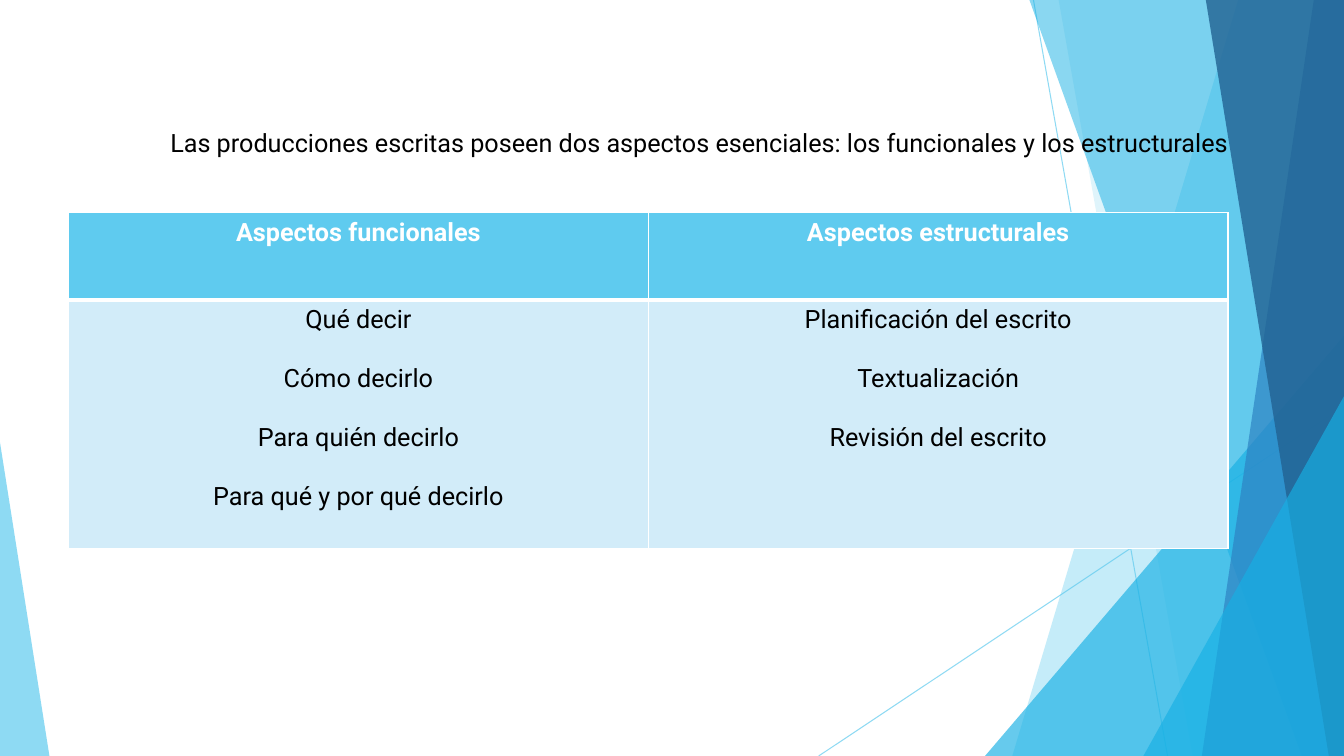
from dataclasses import dataclass

from lxml.etree import SubElement
from pptx import Presentation
from pptx.dml.color import RGBColor
from pptx.enum.shapes import MSO_CONNECTOR as Link, MSO_SHAPE as Kind
from pptx.enum.text import PP_ALIGN as Align
from pptx.oxml import parse_xml
from pptx.oxml.ns import nsdecls, qn
from pptx.util import Inches, Pt

WIDE, HIGH = 13.33, 7.5
FONT, SIZE = "Roboto", Pt(18)
SKY = RGBColor(0x5F, 0xCB, 0xEF)
CYAN = RGBColor(0x17, 0xB0, 0xE4)
BLUE = RGBColor(0x2E, 0x83, 0xC3)
NAVY = RGBColor(0x22, 0x62, 0x92)
PALE = RGBColor(0xD2, 0xEC, 0xF9)
WHITE = RGBColor(0xFF, 0xFF, 0xFF)
BLACK = RGBColor(0, 0, 0)


@dataclass
class Ray:
    start: tuple[float, float]
    end: tuple[float, float]


@dataclass
class Band:
    """Full-height facet that reaches the right edge."""
    top: float
    foot: float
    color: RGBColor
    alpha: int


@dataclass
class Peak:
    """Right triangle standing on the bottom edge."""
    left: float
    top: float
    width: float
    tip: float
    color: RGBColor
    alpha: int


RAYS = [Ray((10.25, 0), (11.58, HIGH)), Ray((WIDE, 4.03), (8.12, HIGH))]
FACETS = [
    Band(12.28, 10.04, SKY, 36),
    Band(10.5, 11.83, SKY, 20),
    Peak(9.77, 3.33, 3.56, 1, CYAN, 66),
    Band(10.21, 12.91, CYAN, 50),
    Band(13.03, 11.92, BLUE, 70),
    Band(11.96, 13.18, NAVY, 80),
    Peak(11.34, 3.93, 1.99, 1, CYAN, 66),
    Peak(0, 4.39, 0.49, 0, SKY, 70),
]
INTRO = ("Las producciones escritas poseen dos aspectos esenciales: "
         "los funcionales y los estructurales")
ASPECTS = {
    "Aspectos funcionales": [
        "Qué decir", "Cómo decirlo", "Para quién decirlo",
        "Para qué y por qué decirlo"],
    "Aspectos estructurales": [
        "Planificación del escrito", "Textualización",
        "Revisión del escrito"],
}


def fade(node, alpha: int) -> None:
    for color in node.iter(qn("a:srgbClr")):
        SubElement(color, qn("a:alpha"), val=str(alpha * 1000))


def style(par, color: RGBColor, bold: bool = False) -> None:
    font = par.font
    font.name, font.size, font.bold = FONT, SIZE, bold
    font.color.rgb = color


def draw_ray(shapes, ray: Ray) -> None:
    line = shapes.add_connector(
        Link.STRAIGHT, *map(Inches, ray.start + ray.end))
    line.line.color.rgb = SKY
    line.line.width = Pt(0.75)
    props = line._element.spPr
    fade(props, 70)
    SubElement(props, qn("a:effectLst"))


def draw_facet(shapes, facet: Band | Peak) -> None:
    if isinstance(facet, Band):
        form = shapes.build_freeform(Inches(facet.top), 0)
        rest = [(WIDE, 0), (WIDE, HIGH), (facet.foot, HIGH)]
        form.add_line_segments([(Inches(x), Inches(y)) for x, y in rest])
        shape = form.convert_to_shape()
    else:
        shape = shapes.add_shape(
            Kind.ISOSCELES_TRIANGLE, Inches(facet.left), Inches(facet.top),
            Inches(facet.width), Inches(HIGH - facet.top))
        shape.adjustments[0] = facet.tip
    shape.shadow.inherit = False
    shape.line.fill.background()
    shape.fill.solid()
    shape.fill.fore_color.rgb = facet.color
    fade(shape._element.spPr, facet.alpha)


def edge(cell, foot: int) -> None:
    props = cell._tc.get_or_add_tcPr()
    sides = {"L": 1, "R": 1, "T": 1, "B": foot}
    for place, (side, width) in enumerate(sides.items()):
        props.insert(place, parse_xml(
            f'<a:ln{side} {nsdecls("a")} w="{Pt(width)}"><a:solidFill>'
            f'<a:srgbClr val="{WHITE}"/></a:solidFill></a:ln{side}>'))


def fill_cell(cell, lines: list[str], head: bool) -> None:
    cell.fill.solid()
    cell.fill.fore_color.rgb = SKY if head else PALE
    edge(cell, 3 if head else 1)
    frame = cell.text_frame
    frame.text = "\n".join(lines)
    for place, par in enumerate(frame.paragraphs):
        par.alignment = Align.CENTER
        par.space_before = Pt(21 if place else 0)
        style(par, WHITE if head else BLACK, head)


def draw_table(shapes) -> None:
    rows = [0.87, 2.46]
    table = shapes.add_table(
        2, len(ASPECTS), Inches(0.68), Inches(2.11),
        Inches(11.5), Inches(sum(rows))).table
    table.horz_banding = False
    for row, height in zip(table.rows, rows):
        row.height = Inches(height)
    for col, (name, items) in enumerate(ASPECTS.items()):
        table.columns[col].width = Inches(5.75)
        fill_cell(table.cell(0, col), [name], True)
        fill_cell(table.cell(1, col), items, False)


def main() -> None:
    deck = Presentation()
    deck.slide_width, deck.slide_height = Inches(WIDE), Inches(HIGH)
    shapes = deck.slides.add_slide(deck.slide_layouts[6]).shapes

    # Backdrop
    for ray in RAYS:
        draw_ray(shapes, ray)
    for facet in FACETS:
        draw_facet(shapes, facet)

    # Table of aspects
    draw_table(shapes)

    # Opening sentence
    box = shapes.add_textbox(
        Inches(1.59), Inches(1.21), Inches(11.75), Inches(0.4))
    box.text_frame.word_wrap = True
    box.text_frame.text = INTRO
    style(box.text_frame.paragraphs[0], BLACK)

    deck.save("out.pptx")


if __name__ == "__main__":
    main()
